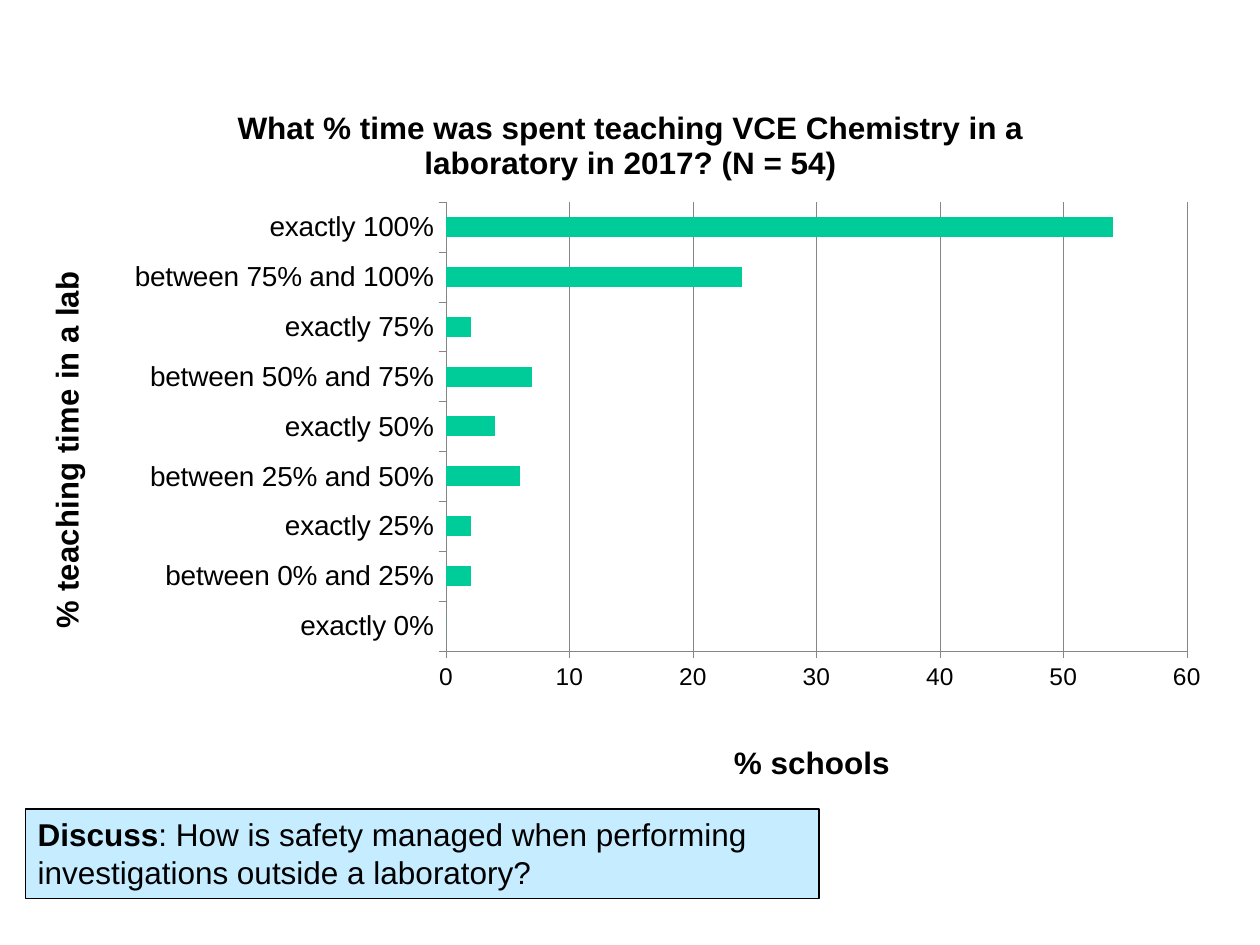
from dataclasses import dataclass

from lxml.etree import SubElement
from pptx import Presentation
from pptx.chart.data import CategoryChartData
from pptx.dml.color import RGBColor
from pptx.enum.chart import XL_CHART_TYPE as ChartType, XL_TICK_MARK as TickMark
from pptx.enum.shapes import MSO_SHAPE as ShapeKind
from pptx.enum.text import MSO_ANCHOR as Anchor, PP_ALIGN as Align
from pptx.oxml import parse_xml
from pptx.oxml.ns import nsdecls, qn
from pptx.util import Inches, Pt


@dataclass(frozen=True)
class Theme:
    font: str = "Arial"
    ink: RGBColor = RGBColor(0, 0, 0)
    bar: RGBColor = RGBColor(0x00, 0xCC, 0x99)
    axis: RGBColor = RGBColor(0x86, 0x86, 0x86)
    panel: RGBColor = RGBColor(0xC6, 0xEC, 0xFF)
    heading: int = 18
    category: int = 16
    value: int = 14


THEME = Theme()
CHART_WIDTH, CHART_HEIGHT = Inches(9.45), Inches(5.59)

SCHOOL_SHARES = {
    "exactly 0%": 0,
    "between 0% and 25%": 2,
    "exactly 25%": 2,
    "between 25% and 50%": 6,
    "exactly 50%": 4,
    "between 50% and 75%": 7,
    "exactly 75%": 2,
    "between 75% and 100%": 24,
    "exactly 100%": 54,
}


def style_font(font, size, bold=False):
    font.name = THEME.font
    font.size = Pt(size)
    font.bold = bold
    font.color.rgb = THEME.ink


def add_text(paragraph, text, size=THEME.heading, bold=False):
    run = paragraph.add_run()
    run.text = text
    style_font(run.font, size, bold)


def place(element, **lengths):
    """Give a chart part a manual layout, measured from the chart's corner."""
    layout = element.find(qn("c:layout"))
    if layout is None:
        layout = parse_xml(f"<c:layout {nsdecls('c')}/>")
        element.insert(0, layout)
    manual = SubElement(layout, qn("c:manualLayout"))
    if "w" in lengths:
        SubElement(manual, qn("c:layoutTarget")).set("val", "inner")
    for name in ("x", "y"):
        SubElement(manual, qn(f"c:{name}Mode")).set("val", "edge")
    for name, length in lengths.items():
        whole = CHART_WIDTH if name in "xw" else CHART_HEIGHT
        SubElement(manual, qn(f"c:{name}")).set("val", str(length / whole))


def set_title(title, text, x, y):
    add_text(title.text_frame.paragraphs[0], text, bold=True)
    place(title._element, x=x, y=y)


def style_axis(axis, size):
    axis.major_tick_mark = TickMark.OUTSIDE
    axis.minor_tick_mark = TickMark.NONE
    axis.format.line.color.rgb = THEME.axis
    axis.format.line.width = Pt(0.25)
    style_font(axis.tick_labels.font, size)


def add_lab_time_chart(slide):
    data = CategoryChartData()
    data.categories = list(SCHOOL_SHARES)
    data.add_series("Series 1", list(SCHOOL_SHARES.values()))
    chart = slide.shapes.add_chart(
        ChartType.BAR_CLUSTERED, Inches(0.27), Inches(0.68),
        CHART_WIDTH, CHART_HEIGHT, data).chart
    style_font(chart.font, 10)
    chart.has_legend = False
    set_title(chart.chart_title,
              "What % time was spent teaching VCE Chemistry in a "
              "laboratory in 2017? (N = 54)", Inches(1.57), Inches(0.13))

    categories, values = chart.category_axis, chart.value_axis
    style_axis(categories, THEME.category)
    style_axis(values, THEME.value)
    set_title(categories.axis_title, "% teaching time in a lab",
              Inches(0.05), Inches(1.5))
    set_title(values.axis_title, "% schools", Inches(5.51), Inches(5.25))
    categories.has_major_gridlines = False
    values.minimum_scale, values.maximum_scale, values.major_unit = 0, 60, 10
    values.tick_labels.number_format = "General"
    values.tick_labels.number_format_is_linked = False
    gridline = values.major_gridlines.format.line
    gridline.color.rgb = THEME.axis
    gridline.width = Pt(0.25)

    plot = chart.plots[0]
    plot.gap_width = 150
    plot.vary_by_categories = False
    fill = plot.series[0].format.fill
    fill.solid()
    fill.fore_color.rgb = THEME.bar
    plot_area = chart._chartSpace.chart.plotArea
    place(plot_area, x=Inches(3.27), y=Inches(0.94),
          w=Inches(5.88), h=Inches(3.62))


def add_discussion_box(slide):
    shape = slide.shapes.add_shape(
        ShapeKind.RECTANGLE, Inches(0.2), Inches(6.42), Inches(6.3), Inches(0.71))
    shape.shadow.inherit = False
    shape.fill.solid()
    shape.fill.fore_color.rgb = THEME.panel
    shape.line.color.rgb = THEME.ink
    shape.line.width = Pt(0.75)
    frame = shape.text_frame
    frame.word_wrap = True
    frame.vertical_anchor = Anchor.TOP
    paragraph = frame.paragraphs[0]
    paragraph.alignment = Align.LEFT
    add_text(paragraph, "Discuss", bold=True)
    add_text(paragraph, ": How is safety managed when performing "
                        "investigations outside a laboratory?")


def main():
    presentation = Presentation()
    presentation.slide_width = Inches(10)
    presentation.slide_height = Inches(7.5)
    slide = presentation.slides.add_slide(presentation.slide_layouts[6])
    add_lab_time_chart(slide)
    add_discussion_box(slide)
    presentation.save("out.pptx")


if __name__ == "__main__":
    main()
